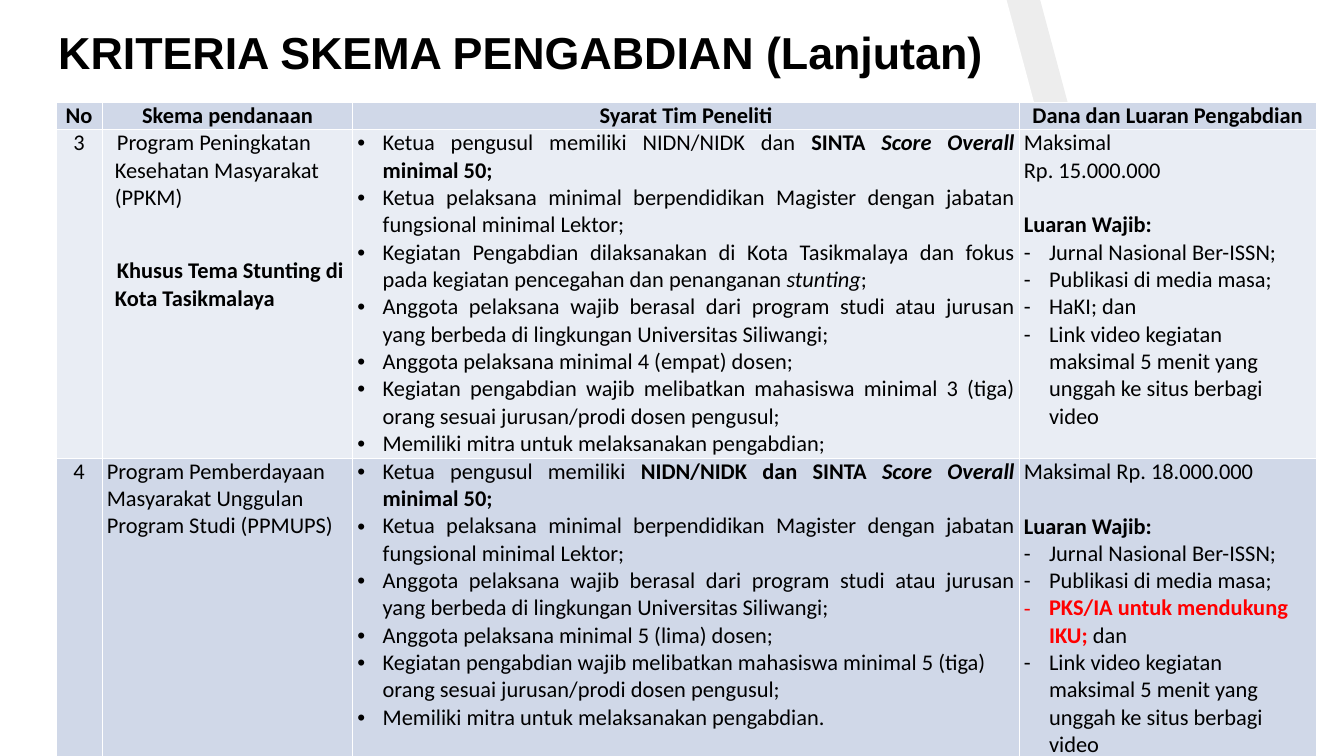
"""Build the slide on the criteria of the community service schemes."""
from lxml import etree
from pptx import Presentation
from pptx import util as u
from pptx.dml import color
from pptx.enum import text
from pptx.oxml import ns

Pt = u.Pt
LINE = 29.3
ALIGN = text.PP_ALIGN


def rgb(code):
    return color.RGBColor.from_string(code)


def add_xml(parent, tag, **attributes):
    return etree.SubElement(parent, ns.qn(tag), attributes)


deck = Presentation()
deck.slide_width, deck.slide_height = Pt(1440), Pt(810)
slide = deck.slides.add_slide(deck.slide_layouts[6])

for left, fill in ((36, "000000"), (0, "FFFFFF")):
    outline = slide.shapes.build_freeform(Pt(left), Pt(0))
    outline.add_line_segments(
        [(Pt(left + x), Pt(y)) for x, y in ((0, 810), (1296, 810), (1078.5, 0))])
    panel = outline.convert_to_shape()
    panel.shadow.inherit = False
    panel.line.fill.background()
    panel.fill.solid()
    panel.fill.fore_color.rgb = rgb(fill)
    if left:
        tint = panel.fill._xPr.find(".//" + ns.qn("a:srgbClr"))
        add_xml(tint, "a:alpha", val="7000")

heading = slide.shapes.add_textbox(Pt(48), Pt(33), Pt(1056), Pt(65)).text_frame
heading.word_wrap = True
heading.vertical_anchor = text.MSO_ANCHOR.BOTTOM
heading.margin_left = heading.margin_right = Pt(14.4)
heading.margin_top = heading.margin_bottom = Pt(14.4)
heading.text = "KRITERIA SKEMA PENGABDIAN (Lanjutan)"
heading_font = heading.paragraphs[0].runs[0].font
heading_font.name, heading_font.size, heading_font.bold = "Arial", Pt(48), True
heading_font.color.rgb = rgb("000000")

kinds = {
    "center": (ALIGN.CENTER, 0, 0, None),
    "plain": (ALIGN.LEFT, 0, 0, None),
    "hang": (ALIGN.LEFT, 8.6, 2.2, None),
    "dot": (ALIGN.JUSTIFY, 27, -27, "•"),
    "dot left": (ALIGN.LEFT, 27, -27, "•"),
    "dash": (ALIGN.LEFT, 27, -27, "-"),
}
score = [("Score Overall", "bi"), (" minimal 50;", "b")]
lecturer = ("dot", "Ketua pelaksana minimal berpendidikan Magister dengan jabatan "
            "fungsional minimal Lektor;")
members = ("dot", "Anggota pelaksana wajib berasal dari program studi atau jurusan "
           "yang berbeda di lingkungan Universitas Siliwangi;")
students = ("Kegiatan pengabdian wajib melibatkan mahasiswa minimal {} (tiga) "
            "orang sesuai jurusan/prodi dosen pengusul;")
outputs = [
    ("plain", [("Luaran Wajib:", "b")], LINE),
    ("dash", "Jurnal Nasional Ber-ISSN;"),
    ("dash", "Publikasi di media masa;"),
]
video = ("dash", "Link video kegiatan maksimal 5 menit yang unggah ke situs berbagi video")

headers = ["No", "Skema pendanaan", "Syarat Tim Peneliti", "Dana dan Luaran Pengabdian"]
rows = [
    [[("center", [(header, "b")])] for header in headers],
    [
        [("center", "3")],
        [("hang", "Program Peningkatan Kesehatan Masyarakat (PPKM)", 0, 10),
         ("hang", [("Khusus Tema Stunting di Kota Tasikmalaya", "b")], LINE + 10, 10)],
        [("dot", [("Ketua pengusul memiliki NIDN/NIDK dan ", ""), ("SINTA ", "b")] + score),
         lecturer,
         ("dot", [("Kegiatan Pengabdian dilaksanakan di Kota Tasikmalaya dan fokus pada "
                   "kegiatan pencegahan dan penanganan ", ""), ("stunting", "i"), (";", "")]),
         members,
         ("dot", "Anggota pelaksana minimal 4 (empat) dosen;"),
         ("dot", students.format(3)),
         ("dot", "Memiliki mitra untuk melaksanakan pengabdian;")],
        [("plain", "Maksimal"), ("plain", "Rp. 15.000.000"), *outputs,
         ("dash", "HaKI; dan"), video],
    ],
    [
        [("center", "4")],
        [("plain", "Program Pemberdayaan Masyarakat Unggulan Program Studi (PPMUPS)")],
        [("dot", [("Ketua pengusul memiliki ", ""), ("NIDN/NIDK dan SINTA ", "b")] + score),
         lecturer,
         members,
         ("dot", "Anggota pelaksana minimal 5 (lima) dosen;"),
         ("dot left", students.format(5)),
         ("dot left", "Memiliki mitra untuk melaksanakan pengabdian.")],
        [("plain", "Maksimal Rp. 18.000.000"), *outputs,
         ("dash", [("PKS/IA untuk mendukung IKU; ", "br"), ("dan", "")]), video],
    ],
]

heights = (29.4, 352, 322.6)
criteria = slide.shapes.add_table(
    3, 4, Pt(60), Pt(109.4), Pt(1350), Pt(sum(heights))).table
criteria.horz_banding = False
for column, width in zip(criteria.columns, (49.5, 268.5, 714, 318)):
    column.width = Pt(width)
for row, height in zip(criteria.rows, heights):
    row.height = Pt(height)

for r, row in enumerate(rows):
    for c, entries in enumerate(row):
        cell = criteria.cell(r, c)
        cell.margin_left = cell.margin_right = Pt(5 if r else 1.5)
        cell.margin_top = cell.margin_bottom = 0
        cell.vertical_anchor = text.MSO_ANCHOR.TOP if r else text.MSO_ANCHOR.MIDDLE
        for side in "LRTB":
            border = add_xml(cell._tc.get_or_add_tcPr(), "a:ln" + side, w="12700")
            add_xml(add_xml(border, "a:solidFill"), "a:srgbClr", val="FFFFFF")
        cell.fill.solid()
        cell.fill.fore_color.rgb = rgb("E9EDF4" if r == 1 else "D0D8E8")

        for index, (kind, content, *spacing) in enumerate(entries):
            frame = cell.text_frame
            paragraph = frame.add_paragraph() if index else frame.paragraphs[0]
            align, left, first, bullet = kinds[kind]
            before, after = spacing + [0] * (2 - len(spacing))
            properties = paragraph._p.get_or_add_pPr()
            properties.set("marL", str(Pt(left)))
            properties.set("indent", str(Pt(first)))
            if bullet:
                add_xml(properties, "a:buFont", typeface="Arial" if bullet == "•" else "Calibri")
                add_xml(properties, "a:buChar", char=bullet)
            paragraph.alignment = align
            paragraph.space_before, paragraph.space_after = Pt(before), Pt(after)
            for words, style in [(content, "")] if isinstance(content, str) else content:
                run = paragraph.add_run()
                run.text = words
                run.font.name, run.font.size = "Calibri", Pt(24)
                run.font.bold, run.font.italic = "b" in style, "i" in style
                run.font.color.rgb = rgb("FF0000" if "r" in style else "000000")

deck.save("out.pptx")
